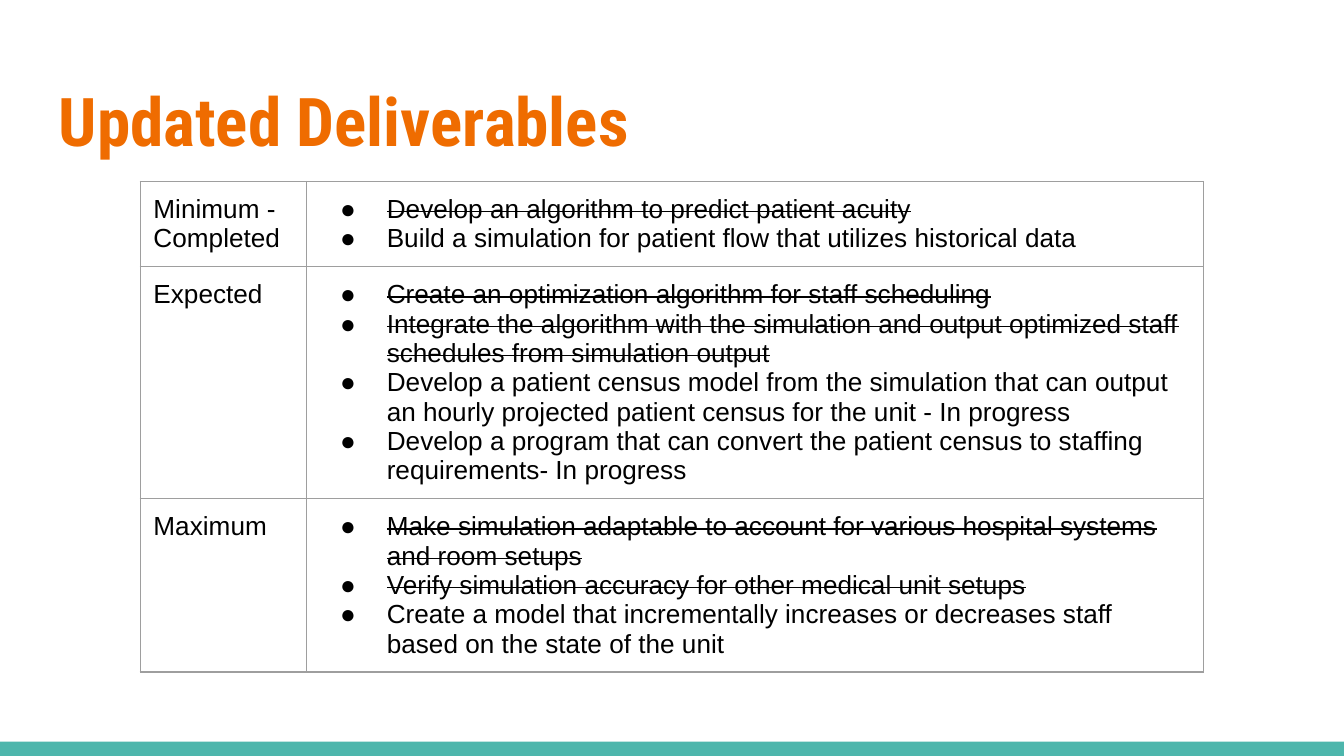
"""Build the Updated Deliverables slide with its table of project goals."""
from dataclasses import dataclass

from lxml.etree import SubElement
from pptx import Presentation
from pptx.dml.color import RGBColor
from pptx.enum.shapes import MSO_SHAPE as Shape
from pptx.enum.text import MSO_ANCHOR as Anchor, PP_ALIGN as Align
from pptx.oxml.ns import qn
from pptx.util import Cm, Pt

ORANGE, TEAL, GREY, BLACK = "EF6C00", "4DB6AC", "9E9E9E", "000000"
MARGIN = Cm(0.25)


@dataclass(frozen=True)
class Goal:
    text: str
    struck: bool = False


@dataclass(frozen=True)
class Level:
    label: str
    goals: tuple[Goal, ...]


LEVELS = (
    Level("Minimum -\nCompleted", (
        Goal("Develop an algorithm to predict patient acuity", True),
        Goal("Build a simulation for patient flow that utilizes historical data"),
    )),
    Level("Expected", (
        Goal("Create an optimization algorithm for staff scheduling", True),
        Goal("Integrate the algorithm with the simulation and output optimized "
             "staff schedules from simulation output", True),
        Goal("Develop a patient census model from the simulation that can output "
             "an hourly projected patient census for the unit - In progress"),
        Goal("Develop a program that can convert the patient census to staffing "
             "requirements- In progress"),
    )),
    Level("Maximum", (
        Goal("Make simulation adaptable to account for various hospital systems "
             "and room setups", True),
        Goal("Verify simulation accuracy for other medical unit setups", True),
        Goal("Create a model that incrementally increases or decreases staff "
             "based on the state of the unit"),
    )),
)


def color(value: str) -> RGBColor:
    return RGBColor.from_string(value)


def style_font(font, name: str, size: float, value: str, bold: bool = False) -> None:
    font.name, font.size, font.bold = name, Pt(size), bold
    font.color.rgb = color(value)


def set_margins(holder) -> None:
    holder.margin_left = holder.margin_right = MARGIN
    holder.margin_top = holder.margin_bottom = MARGIN


def add_bullet(paragraph) -> None:
    properties = paragraph._p.get_or_add_pPr()
    properties.set("marL", str(Cm(1.27)))
    properties.set("indent", str(-Cm(0.88)))
    tint = SubElement(properties, qn("a:buClr"))
    SubElement(tint, qn("a:srgbClr"), val=BLACK)
    SubElement(properties, qn("a:buFont"), typeface="Arial")
    SubElement(properties, qn("a:buChar"), char="●")


def add_borders(cell) -> None:
    properties = cell._tc.get_or_add_tcPr()
    for side in ("lnL", "lnR", "lnT", "lnB"):
        border = SubElement(properties, qn(f"a:{side}"), w=str(Pt(0.75)))
        fill = SubElement(border, qn("a:solidFill"))
        SubElement(fill, qn("a:srgbClr"), val=GREY)


def fill_cell(cell, text: str) -> None:
    cell.text_frame.text = text
    set_margins(cell)
    add_borders(cell)
    cell.fill.background()
    for paragraph in cell.text_frame.paragraphs:
        for run in paragraph.runs:
            style_font(run.font, "Arial", 14, BLACK)


def fill_goals(cell, goals: tuple[Goal, ...]) -> None:
    fill_cell(cell, "\n".join(goal.text for goal in goals))
    for paragraph, goal in zip(cell.text_frame.paragraphs, goals):
        add_bullet(paragraph)
        if goal.struck:
            paragraph.runs[0]._r.get_or_add_rPr().set("strike", "sngStrike")


def add_footer_band(slide, width: int) -> None:
    band = slide.shapes.add_shape(Shape.RECTANGLE, 0, Cm(14.02), width, Cm(0.27))
    band.shadow.inherit = False
    band.fill.solid()
    band.fill.fore_color.rgb = color(TEAL)
    band.line.fill.background()


def add_title(slide, text: str) -> None:
    title = slide.shapes.title
    title.left, title.top = Cm(0.86), Cm(1.24)
    title.width, title.height = Cm(23.67), Cm(1.96)
    frame = title.text_frame
    frame.text = text
    frame.word_wrap = True
    frame.vertical_anchor = Anchor.TOP
    set_margins(frame)
    heading = frame.paragraphs[0]
    heading.alignment = Align.LEFT
    style_font(heading.runs[0].font, "Roboto Condensed", 36, ORANGE, bold=True)


def add_deliverables(slide, levels: tuple[Level, ...]) -> None:
    label_width, goals_width, row_height = Cm(3.14), Cm(16.96), Cm(1.07)
    table = slide.shapes.add_table(
        len(levels), 2, Cm(2.65), Cm(3.43),
        label_width + goals_width, row_height * len(levels)).table
    table.first_row = table.horz_banding = False
    table.columns[0].width, table.columns[1].width = label_width, goals_width
    for index, level in enumerate(levels):
        fill_cell(table.cell(index, 0), level.label)
        fill_goals(table.cell(index, 1), level.goals)


def main() -> None:
    deck = Presentation()
    deck.slide_width, deck.slide_height = Cm(25.4), Cm(14.29)
    slide = deck.slides.add_slide(deck.slide_layouts[5])
    add_footer_band(slide, deck.slide_width)
    add_title(slide, "Updated Deliverables")
    add_deliverables(slide, LEVELS)
    deck.save("out.pptx")


if __name__ == "__main__":
    main()
